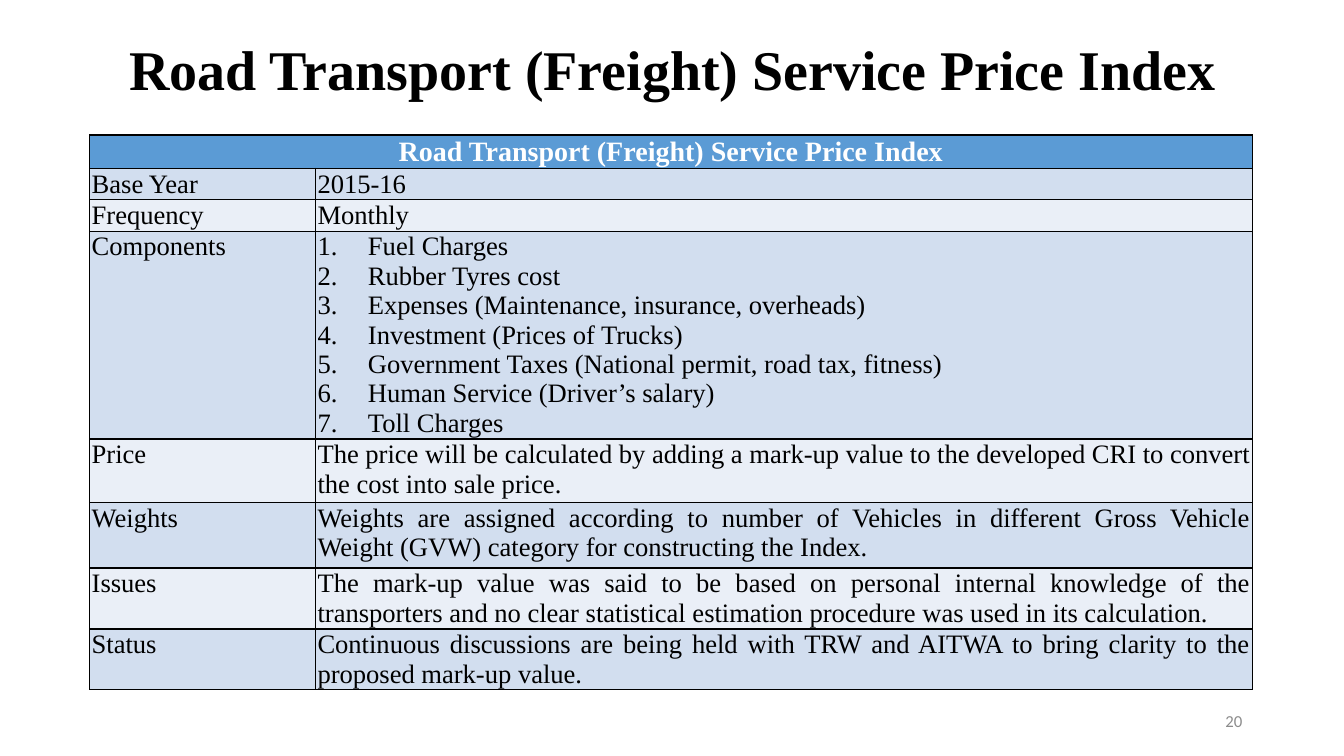
from dataclasses import dataclass

from lxml.etree import SubElement
from pptx import Presentation
from pptx.dml.color import RGBColor
from pptx.enum.text import MSO_ANCHOR, PP_ALIGN
from pptx.oxml.ns import qn
from pptx.util import Inches, Pt


@dataclass(frozen=True)
class Theme:
    """Colours, fonts and type sizes of the slide."""
    serif: str = "Times New Roman"
    sans: str = "Calibri"
    ink: str = "000000"
    white: str = "FFFFFF"
    grey: str = "8C8C8C"
    header: str = "5B9BD5"
    bands: tuple = ("D2DEEF", "EAEFF7")
    title_size: int = 40
    header_size: int = 20
    body_size: int = 19
    number_size: int = 12


THEME = Theme()
TITLE = "Road Transport (Freight) Service Price Index"
COMPONENTS = [
    "Fuel Charges",
    "Rubber Tyres cost",
    "Expenses (Maintenance, insurance, overheads)",
    "Investment (Prices of Trucks)",
    "Government Taxes (National permit, road tax, fitness)",
    "Human Service (Driver’s salary)",
    "Toll Charges",
]
ROWS = [
    ("Base Year", "2015-16", 0.31),
    ("Frequency", "Monthly", 0.31),
    ("Components", COMPONENTS, 2.06),
    ("Price", "The price will be calculated by adding a mark-up value to the "
     "developed CRI to convert the cost into sale price.", 0.63),
    ("Weights", "Weights are assigned according to number of Vehicles in different "
     "Gross Vehicle Weight (GVW) category for constructing the Index.", 0.65),
    ("Issues", "The mark-up value was said to be based on personal internal "
     "knowledge of the transporters and no clear statistical estimation "
     "procedure was used in its calculation.", 0.6),
    ("Status", "Continuous discussions are being held with TRW and AITWA to bring "
     "clarity to the proposed mark-up value.", 0.6),
]
HEADER_HEIGHT = 0.33
COLUMNS = (2.24, 9.29)


def add_text(tf, text, *, size=THEME.body_size, font=THEME.serif, color=THEME.ink,
             bold=False, align=PP_ALIGN.LEFT, spacing=None):
    """Write a string, or a list as numbered paragraphs, into a text frame."""
    numbered = isinstance(text, list)
    for i, line in enumerate(text if numbered else [text]):
        p = tf.add_paragraph() if i else tf.paragraphs[0]
        p.alignment = align
        if spacing:
            p.line_spacing = spacing
        if numbered:
            pPr = p._p.get_or_add_pPr()
            pPr.set("marL", str(Inches(0.5)))
            pPr.set("indent", str(-Inches(0.5)))
            SubElement(pPr, qn("a:buFont"), typeface="+mj-lt")
            SubElement(pPr, qn("a:buAutoNum"), type="arabicPeriod")
        r = p.add_run()
        r.text = line
        r.font.size = Pt(size)
        r.font.name = font
        r.font.bold = bold
        r.font.color.rgb = RGBColor.from_string(color)


def format_cell(cell, fill):
    """Give a cell its margins, black borders and fill."""
    cell.margin_left = cell.margin_right = Inches(0.02)
    cell.margin_top = cell.margin_bottom = Inches(0.01)
    tcPr = cell._tc.get_or_add_tcPr()
    for side in ("lnL", "lnR", "lnT", "lnB"):
        ln = SubElement(tcPr, qn(f"a:{side}"), w=str(Pt(1)))
        SubElement(SubElement(ln, qn("a:solidFill")), qn("a:srgbClr"), val=THEME.ink)
    cell.fill.solid()
    cell.fill.fore_color.rgb = RGBColor.from_string(fill)


def add_title(s, left, top, width, height):
    """Place and format the title placeholder."""
    sp = s.shapes.title
    sp.left, sp.top, sp.width, sp.height = map(Inches, (left, top, width, height))
    tf = sp.text_frame
    tf.vertical_anchor = MSO_ANCHOR.MIDDLE
    add_text(tf, TITLE, size=THEME.title_size, bold=True,
             align=PP_ALIGN.CENTER, spacing=0.9)


def add_index_table(s, left, top):
    """Place the table of index facts with its merged header."""
    heights = [HEADER_HEIGHT] + [height for _, _, height in ROWS]
    box = map(Inches, (left, top, sum(COLUMNS), sum(heights)))
    table = s.shapes.add_table(len(heights), len(COLUMNS), *box).table
    for column, width in zip(table.columns, COLUMNS):
        column.width = Inches(width)
    for row, height in zip(table.rows, heights):
        row.height = Inches(height)
    for i, row in enumerate(table.rows):
        for cell in row.cells:
            format_cell(cell, THEME.bands[(i - 1) % 2] if i else THEME.header)
    header = table.cell(0, 0)
    header.merge(table.cell(0, 1))
    add_text(header.text_frame, TITLE, size=THEME.header_size, color=THEME.white,
             bold=True, align=PP_ALIGN.CENTER)
    for i, (label, detail, _) in enumerate(ROWS, 1):
        add_text(table.cell(i, 0).text_frame, label)
        add_text(table.cell(i, 1).text_frame, detail, align=PP_ALIGN.JUSTIFY)


def add_page_number(s, left, top, width, height):
    """Place the page number at the right of its box."""
    tf = s.shapes.add_textbox(*map(Inches, (left, top, width, height))).text_frame
    tf.word_wrap = True
    tf.vertical_anchor = MSO_ANCHOR.MIDDLE
    add_text(tf, "20", size=THEME.number_size, font=THEME.sans, color=THEME.grey,
             align=PP_ALIGN.RIGHT)


def main():
    """Build and save the slide."""
    prs = Presentation()
    prs.slide_width, prs.slide_height = Inches(13.33), Inches(7.5)
    s = prs.slides.add_slide(prs.slide_layouts[5])
    add_index_table(s, 0.89, 1.34)
    add_title(s, 0.92, 0, 11.5, 1.43)
    add_page_number(s, 9.42, 6.95, 3, 0.4)
    prs.save("out.pptx")


if __name__ == "__main__":
    main()
